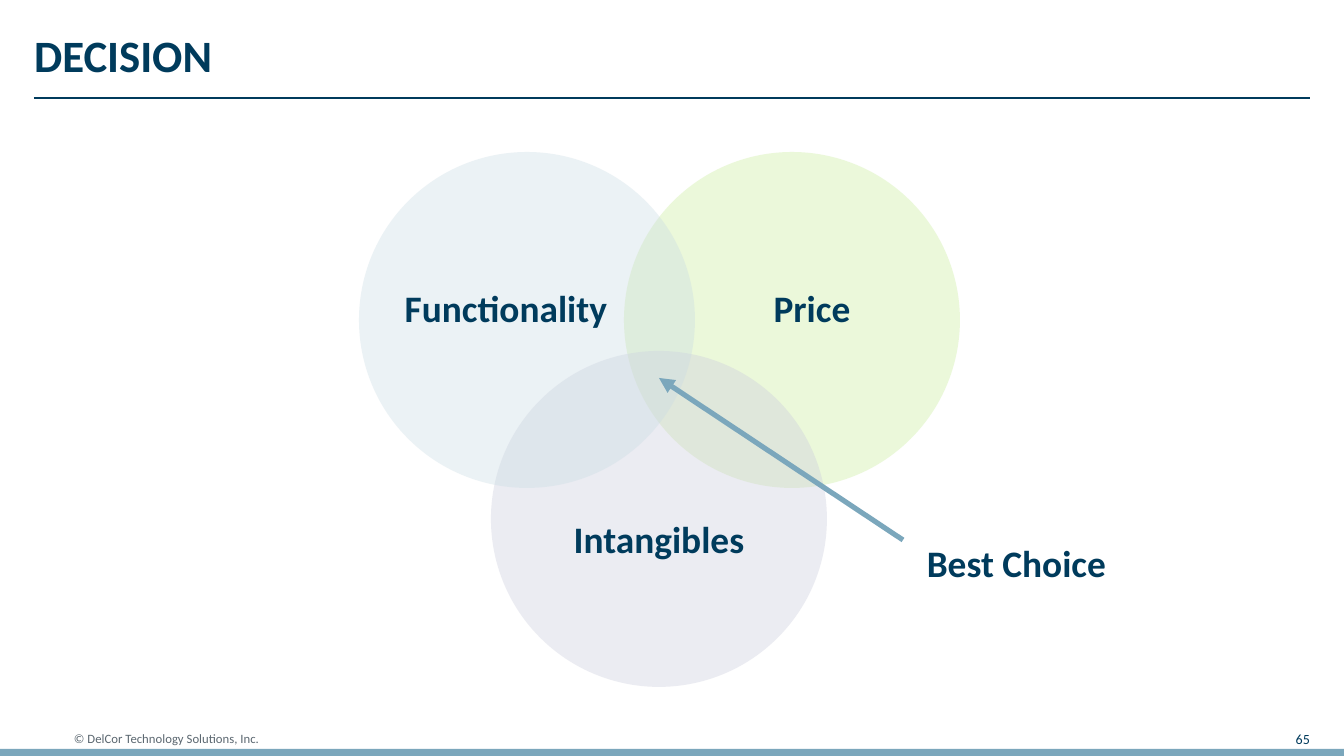
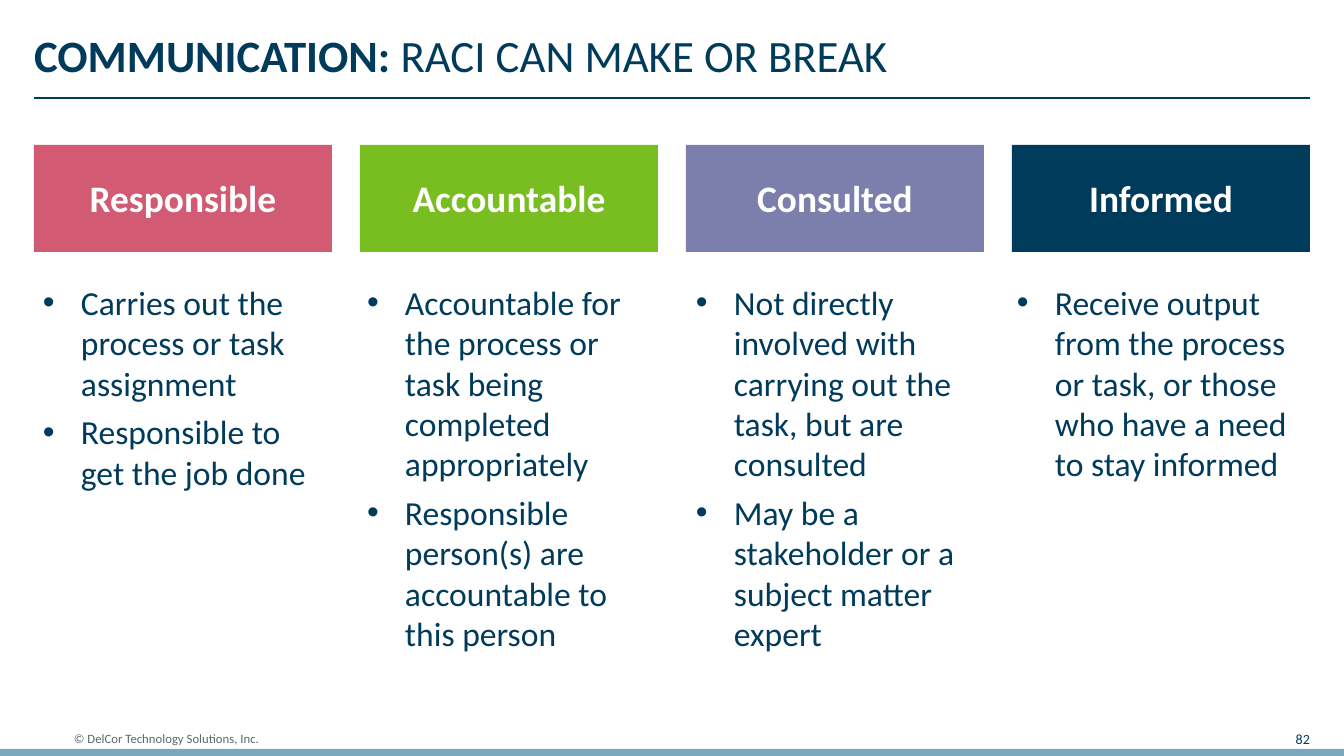
import lxml.etree
import pptx
import pptx.dml.color
import pptx.enum.shapes
import pptx.enum.text
import pptx.oxml.ns
import pptx.util

EMU_PER_PX = 914400 / 134.4
FONT = "Calibri"
NAVY = "003B5C"
STEEL = "7BA7BC"
GRAY = "5B6770"
WHITE = "FFFFFF"
MARGIN = 34
CONTENT_WIDTH = 1276
ALIGN = pptx.enum.text.PP_ALIGN
ANCHOR = pptx.enum.text.MSO_ANCHOR
SHAPE = pptx.enum.shapes.MSO_SHAPE


def px(length):
    return pptx.util.Emu(round(length * EMU_PER_PX))


def box_of(left, top, width, height):
    return px(left), px(top), px(width), px(height)


def color(value):
    return pptx.dml.color.RGBColor.from_string(value)


def add_xml(parent, tag, **attributes):
    return lxml.etree.SubElement(parent, pptx.oxml.ns.qn(tag), attributes)


def set_font(font, size, value, bold=False):
    font.name = FONT
    font.size = pptx.util.Pt(size)
    font.color.rgb = color(value)
    font.bold = bold


def prepare_frame(frame, anchor=ANCHOR.TOP):
    frame.word_wrap = True
    frame.auto_size = pptx.enum.text.MSO_AUTO_SIZE.NONE
    frame.vertical_anchor = anchor
    frame.margin_left = frame.margin_right = 0
    frame.margin_top = frame.margin_bottom = 0


def add_text(slide, box, text, size, value=NAVY, bold=False,
             align=ALIGN.LEFT, anchor=ANCHOR.TOP):
    frame = slide.shapes.add_textbox(*box_of(*box)).text_frame
    prepare_frame(frame, anchor)
    paragraph = frame.paragraphs[0]
    paragraph.text = text
    paragraph.alignment = align
    set_font(paragraph.font, size, value, bold)


def add_label(slide, box, text, value=NAVY):
    add_text(slide, box, text, 20, value, True, ALIGN.CENTER)


def add_bullets(slide, box, items):
    frame = slide.shapes.add_textbox(*box_of(*box)).text_frame
    prepare_frame(frame)
    for index, item in enumerate(items):
        paragraph = frame.add_paragraph() if index else frame.paragraphs[0]
        paragraph.text = item
        paragraph.space_after = pptx.util.Pt(4.5)
        properties = paragraph._p.get_or_add_pPr()
        properties.set("marL", str(px(38)))
        properties.set("indent", str(-px(38)))
        add_xml(properties, "a:buFont", typeface="Arial")
        add_xml(properties, "a:buChar", char="•")
        set_font(paragraph.font, 18, NAVY)


def add_filled(slide, kind, box, fill, opacity=100):
    shape = slide.shapes.add_shape(kind, *box_of(*box))
    shape.shadow.inherit = False
    shape.fill.solid()
    shape.fill.fore_color.rgb = color(fill)
    shape.line.fill.background()
    if opacity < 100:
        solid = shape._element.spPr.find(pptx.oxml.ns.qn("a:solidFill"))
        add_xml(solid[0], "a:alpha", val=str(opacity * 1000))


def add_line(slide, start, end, value, width, arrow=False):
    connector = slide.shapes.add_connector(
        pptx.enum.shapes.MSO_CONNECTOR.STRAIGHT,
        *map(px, start), *map(px, end))
    connector.line.color.rgb = color(value)
    connector.line.width = pptx.util.Pt(width)
    if arrow:
        add_xml(connector.line._get_or_add_ln(), "a:headEnd", type="triangle")
    add_xml(connector._element.spPr, "a:effectLst")


def add_slide(presentation, number, strong_title, light_title=""):
    slide = presentation.slides.add_slide(presentation.slide_layouts[5])
    add_filled(slide, SHAPE.RECTANGLE, (0, 749, 1344, 12), STEEL)
    add_text(slide, (74, 727, 258, 23), "© DelCor Technology Solutions, Inc.",
             6.8, GRAY, anchor=ANCHOR.MIDDLE)
    add_text(slide, (1262, 727, 48, 23), str(number), 7.5,
             align=ALIGN.RIGHT, anchor=ANCHOR.MIDDLE)
    add_line(slide, (MARGIN, 98), (MARGIN + CONTENT_WIDTH, 98), NAVY, 1)

    title = slide.shapes.title
    title.left, title.top, title.width, title.height = box_of(
        MARGIN, 34, CONTENT_WIDTH, 64)
    prepare_frame(title.text_frame)
    paragraph = title.text_frame.paragraphs[0]
    paragraph.alignment = ALIGN.LEFT
    paragraph.line_spacing = 0.9
    for text, bold in ((strong_title, True), (light_title, False)):
        if text:
            run = paragraph.add_run()
            run.text = text
            set_font(run.font, 24, NAVY, bold)
    return slide


def add_decision_slide(presentation):
    slide = add_slide(presentation, 65, "DECISION")
    diameter = 336
    for left, top, fill in (
        (624, 152, "CAEE9C"),
        (491, 351, "CBCCDD"),
        (359, 152, "CADCE4"),
    ):
        add_filled(slide, SHAPE.OVAL, (left, top, diameter, diameter), fill, 37)
    add_label(slide, (375, 285, 262, 66), "Functionality")
    add_label(slide, (701, 285, 222, 66), "Price")
    add_label(slide, (548, 516, 222, 66), "Intangibles")
    add_line(slide, (659, 378), (903, 540), STEEL, 2.75, arrow=True)
    add_label(slide, (903, 540, 227, 66), "Best Choice")


def add_raci_slide(presentation):
    slide = add_slide(presentation, 82, "COMMUNICATION: ",
                      "RACI CAN MAKE OR BREAK")
    roles = (
        ("Responsible", "D25B73", (43, 282, 285, 258), (
            "Carries out the process or task assignment",
            "Responsible to get the job done")),
        ("Accountable", "78BE20", (367, 282, 286, 394), (
            "Accountable for the process or task being completed appropriately",
            "Responsible person(s) are accountable to this person")),
        ("Consulted", "7C7FAB", (696, 282, 285, 410), (
            "Not directly involved with carrying out the task, but are consulted",
            "May be a stakeholder or a subject matter expert")),
        ("Informed", NAVY, (1017, 282, 289, 410), (
            "Receive output from the process or task, or those who have "
            "a need to stay informed",)),
    )
    header_width = 298
    pitch = (CONTENT_WIDTH - header_width) // (len(roles) - 1)
    for index, (role, fill, duties_box, duties) in enumerate(roles):
        left = MARGIN + index * pitch
        add_filled(slide, SHAPE.RECTANGLE, (left, 145, header_width, 107), fill)
        add_label(slide, (left + 50, 175, 198, 47), role, WHITE)
        add_bullets(slide, duties_box, duties)


def main():
    presentation = pptx.Presentation()
    presentation.slide_width = px(1344)
    presentation.slide_height = px(756)
    add_decision_slide(presentation)
    add_raci_slide(presentation)
    presentation.save("out.pptx")


if __name__ == "__main__":
    main()
